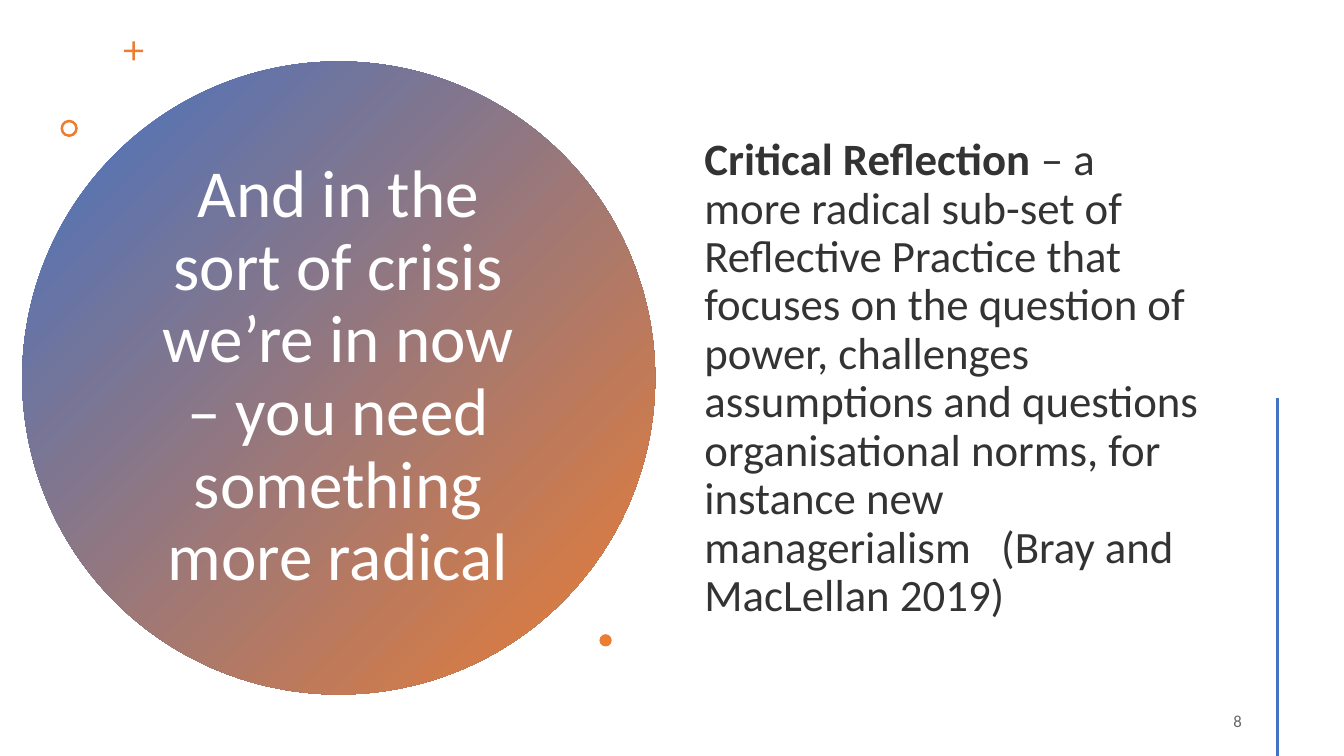
import pptx
import pptx.util
import pptx.dml.color
import pptx.enum.shapes
import pptx.enum.text
import pptx.oxml
import pptx.oxml.ns

Pt = pptx.util.Pt
RGB = pptx.dml.color.RGBColor
SHAPE = pptx.enum.shapes.MSO_SHAPE
ALIGN = pptx.enum.text.PP_ALIGN

BLUE = RGB(0x44, 0x72, 0xC4)
ORANGE = RGB(0xED, 0x7D, 0x31)
WHITE = RGB(0xFF, 0xFF, 0xFF)
DARK = RGB(0x33, 0x33, 0x33)
GREY = RGB(0x66, 0x66, 0x66)

TITLE = "And in the sort of crisis we’re in now – you need something more radical"
TERM = "Critical Reflection "
DEFINITION = (
    "– a  more radical sub-set of Reflective Practice that focuses on the "
    "question of power, challenges assumptions and questions organisational "
    "norms, for instance new managerialism   (Bray and MacLellan 2019)"
)


def set_all(obj, values):
    for name, value in values.items():
        setattr(obj, name, value)


def add_shape(slide, kind, x, y, size, adjust=None):
    """Square-framed shape with an orange fill and no outline."""
    sp = slide.shapes.add_shape(kind, Pt(x), Pt(y), Pt(size), Pt(size))
    sp.shadow.inherit = False
    sp.fill.solid()
    sp.fill.fore_color.rgb = ORANGE
    sp.line.fill.background()
    if adjust is not None:
        sp.adjustments[0] = adjust
    return sp


def fill_gradient(sp, angle, colors):
    sp.fill.gradient()
    sp.fill.gradient_angle = angle
    for stop, color in zip(sp.fill.gradient_stops, colors):
        stop.color.rgb = color


def add_text(slide, box, runs, size, color, para):
    """One paragraph, centred vertically; runs are (text, bold) pairs."""
    tf = slide.shapes.add_textbox(*map(Pt, box)).text_frame
    set_all(tf, {"word_wrap": True,
                 "vertical_anchor": pptx.enum.text.MSO_ANCHOR.MIDDLE})
    p = tf.paragraphs[0]
    set_all(p, para)
    for text, bold in runs:
        r = p.add_run()
        r.text = text
        set_all(r.font, {"name": "Calibri", "size": Pt(size), "bold": bold})
        r.font.color.rgb = color


def add_line(slide, x, top, bottom, color, width):
    line = slide.shapes.add_connector(
        pptx.enum.shapes.MSO_CONNECTOR.STRAIGHT, Pt(x), Pt(top), Pt(x), Pt(bottom))
    line.line.color.rgb = color
    line.line.width = Pt(width)
    line._element.spPr.append(
        pptx.oxml.parse_xml("<a:effectLst %s/>" % pptx.oxml.ns.nsdecls("a")))


def main():
    prs = pptx.Presentation()
    set_all(prs, {"slide_width": Pt(960), "slide_height": Pt(540)})
    slide = prs.slides.add_slide(prs.slide_layouts[6])

    # Title on the gradient circle
    circle = add_shape(slide, SHAPE.OVAL, 15.84, 43.92, 452.16)
    fill_gradient(circle, 315, (BLUE, ORANGE))
    add_text(slide, (97.92, 101.52, 287.28, 336.24), [(TITLE, False)], 48, WHITE,
             {"alignment": ALIGN.CENTER, "line_spacing": 0.9})

    # Small ornaments: plus, ring and dot
    add_shape(slide, SHAPE.CROSS, 88.6, 29.5, 13.7, 0.43)
    add_shape(slide, SHAPE.DONUT, 43.2, 85.5, 12.4, 0.15)
    add_shape(slide, SHAPE.OVAL, 428.2, 453, 8.8)

    # Definition
    add_text(slide, (496.08, 41.04, 375.84, 459.36),
             [(TERM, True), (DEFINITION, False)], 32, DARK,
             {"alignment": ALIGN.LEFT, "line_spacing": 0.9, "space_before": Pt(10)})

    # Slide number and side rule
    add_text(slide, (678.24, 500.4, 216, 28.8), [("8", False)], 12, GREY,
             {"alignment": ALIGN.RIGHT, "space_after": Pt(6)})
    add_line(slide, 912.24, 284.4, 540, BLUE, 2)

    prs.save("out.pptx")


if __name__ == "__main__":
    main()
